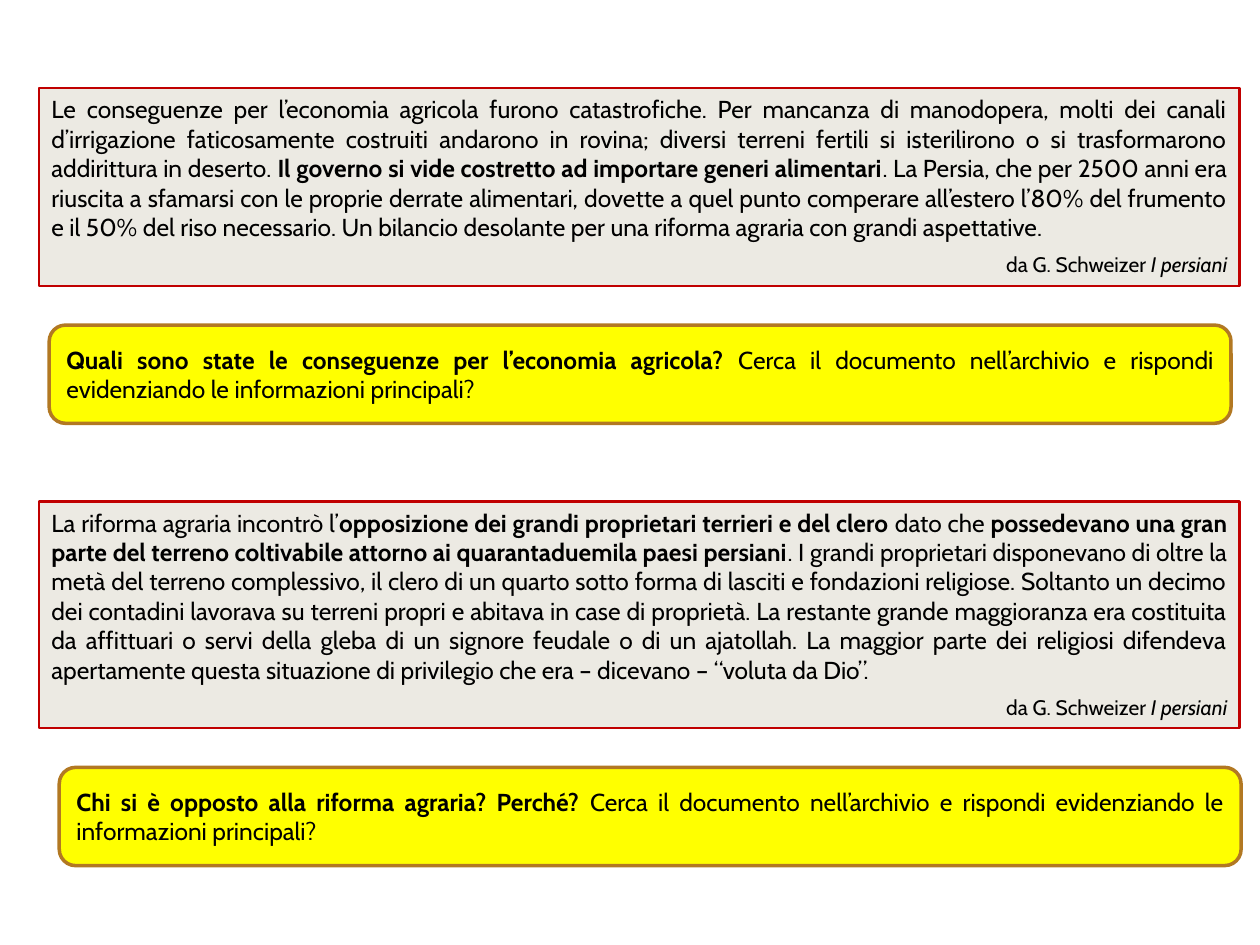
import pptx
import pptx.util
import pptx.dml.color
import pptx.enum.shapes
import pptx.enum.text

Inches = pptx.util.Inches
Pt = pptx.util.Pt
ALIGN = pptx.enum.text.PP_ALIGN
SHAPE = pptx.enum.shapes.MSO_SHAPE

COLORS = {
    "passage": "ECEAE3",
    "passage_border": "C00000",
    "question": "FFFF00",
    "question_border": "B27822",
    "text": "000000",
}
FONT = "Cabin"

# Content: each run is (text, style), style "b" bold, "i" italic, "" plain
SOURCE = [("da G. Schweizer ", ""), ("I persiani", "i")]
TASK = ("Cerca il documento nell’archivio e rispondi evidenziando "
        "le informazioni principali?", "")

# (top, height, runs)
PASSAGES = [
    (0.7, 1.57, [
        ("Le conseguenze per l’economia agricola furono catastrofiche. Per mancanza di "
         "manodopera, molti dei canali d’irrigazione faticosamente costruiti andarono in "
         "rovina; diversi terreni fertili si isterilirono o si trasformarono addirittura "
         "in deserto. ", ""),
        ("Il governo si vide costretto ad importare generi alimentari", "b"),
        (". La Persia, che per 2500 anni era riuscita a sfamarsi con le proprie derrate "
         "alimentari, dovette a quel punto comperare all’estero l’80% del frumento e il "
         "50% del riso necessario. Un bilancio desolante per una riforma agraria con "
         "grandi aspettative.", ""),
    ]),
    (3.98, 1.8, [
        ("La riforma agraria incontrò l’", ""),
        ("opposizione dei grandi proprietari terrieri e del clero ", "b"),
        ("dato che ", ""),
        ("possedevano una gran parte del terreno coltivabile attorno ai "
         "quarantaduemila paesi persiani", "b"),
        (". I grandi proprietari disponevano di oltre la metà del terreno complessivo, il "
         "clero di un quarto sotto forma di lasciti e fondazioni religiose. Soltanto un "
         "decimo dei contadini lavorava su terreni propri e abitava in case di proprietà. "
         "La restante grande maggioranza era costituita da affittuari o servi della gleba "
         "di un signore feudale o di un ajatollah. La maggior parte dei religiosi "
         "difendeva apertamente questa situazione di privilegio che era – dicevano – "
         "“voluta da Dio”.", ""),
    ]),
]

# (left, top, runs)
QUESTIONS = [
    (0.39, 2.58, [("Quali sono state le conseguenze per l’economia agricola? ", "b"), TASK]),
    (0.47, 6.09, [("Chi si è opposto alla riforma agraria? Perché? ", "b"), TASK]),
]


def rgb(name):
    return pptx.dml.color.RGBColor.from_string(COLORS[name])


def add_box(slide, kind, left, top, width, height, color, border):
    box = slide.shapes.add_shape(
        kind, Inches(left), Inches(top), Inches(width), Inches(height))
    box.shadow.inherit = False
    box.fill.solid()
    box.fill.fore_color.rgb = rgb(color)
    box.line.color.rgb = rgb(color + "_border")
    box.line.width = Pt(border)
    box.text_frame.word_wrap = True
    return box.text_frame


def write(paragraph, runs, size=14, align=ALIGN.JUSTIFY, after=0):
    paragraph.alignment = align
    paragraph.space_after = Pt(after)
    for text, style in runs:
        run = paragraph.add_run()
        run.text = text
        run.font.name = FONT
        run.font.size = Pt(size)
        run.font.bold = style == "b"
        run.font.italic = style == "i"
        run.font.color.rgb = rgb("text")


def main():
    deck = pptx.Presentation()
    deck.slide_width, deck.slide_height = Inches(10), Inches(7.5)
    slide = deck.slides.add_slide(deck.slide_layouts[6])

    # Quoted passages with their source
    for top, height, runs in PASSAGES:
        passage = add_box(slide, SHAPE.RECTANGLE, 0.31, top, 9.53, height, "passage", 1.5)
        passage.auto_size = pptx.enum.text.MSO_AUTO_SIZE.SHAPE_TO_FIT_TEXT
        passage.vertical_anchor = pptx.enum.text.MSO_ANCHOR.TOP
        write(passage.paragraphs[0], runs, after=6)
        write(passage.add_paragraph(), SOURCE, size=12, align=ALIGN.RIGHT, after=6)

    # Questions for the reader
    for left, top, runs in QUESTIONS:
        question = add_box(slide, SHAPE.ROUNDED_RECTANGLE, left, top, 9.38, 0.78, "question", 2)
        question.vertical_anchor = pptx.enum.text.MSO_ANCHOR.MIDDLE
        write(question.paragraphs[0], runs)

    deck.save("out.pptx")


if __name__ == "__main__":
    main()
